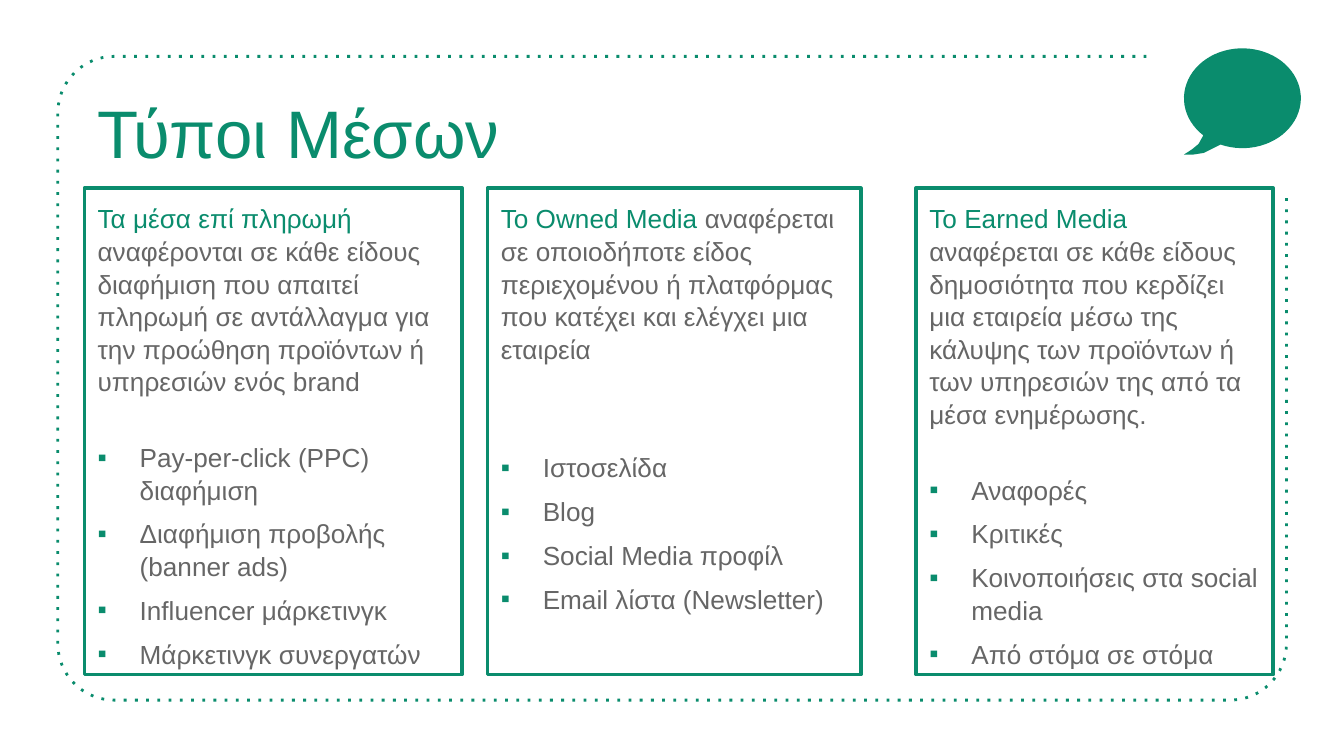
from dataclasses import dataclass
from math import cos, radians, sin

from lxml.etree import SubElement
from pptx import Presentation
from pptx.dml.color import RGBColor
from pptx.enum.shapes import MSO_SHAPE
from pptx.enum.text import MSO_ANCHOR, MSO_AUTO_SIZE, PP_ALIGN
from pptx.oxml.ns import qn
from pptx.util import Pt


@dataclass(frozen=True)
class Theme:
    """Colours, font and type sizes of the deck."""
    green: str = "0A8C6D"
    grey: str = "666666"
    white: str = "FFFFFF"
    font: str = "Arial"
    title_size: float = 36
    body_size: float = 14
    title_spacing: float = 1.1
    body_spacing: float = 1.04
    inset: float = 7.2
    indent: float = 22.5


THEME = Theme()
COLUMNS = [
    dict(left=45.2, width=202.3, lead="Τα μέσα επί πληρωμή ",
         body="αναφέρονται σε κάθε είδους διαφήμιση που απαιτεί πληρωμή σε αντάλλαγμα "
              "για την προώθηση προϊόντων ή υπηρεσιών ενός brand",
         items=["Pay-per-click (PPC) διαφήμιση", "Διαφήμιση προβολής (banner ads)",
                "Influencer μάρκετινγκ", "Μάρκετινγκ συνεργατών"], gap=23),
    dict(left=261.2, width=200, lead="Το Owned Media ",
         body="αναφέρεται σε οποιοδήποτε είδος περιεχομένου ή πλατφόρμας "
              "που κατέχει και ελέγχει μια εταιρεία",
         items=["Ιστοσελίδα", "Blog", "Social Media προφίλ", "Email λίστα (Newsletter)"],
         gap=46),
    dict(left=490.8, width=191.3, lead="Το Earned Media ",
         body="αναφέρεται σε κάθε είδους δημοσιότητα που κερδίζει μια εταιρεία μέσω της "
              "κάλυψης των προϊόντων ή των υπηρεσιών της από τα μέσα ενημέρωσης.",
         items=["Αναφορές", "Κριτικές", "Κοινοποιήσεις στα social media",
                "Από στόμα σε στόμα"], gap=23),
]


def color(value):
    """Turn a hex string into a colour."""
    return RGBColor.from_string(value)


def write(para, text, size=THEME.body_size, ink=THEME.grey,
          spacing=THEME.body_spacing, before=0):
    """Add a formatted span of text to a paragraph."""
    para.alignment = PP_ALIGN.LEFT
    para.line_spacing = spacing
    para.space_before = Pt(before)
    span = para.add_run()
    span.text = text
    span.font.name = THEME.font
    span.font.size = Pt(size)
    span.font.color.rgb = color(ink)


def add_bullet(para):
    """Give a paragraph a green square bullet with a hanging indent."""
    properties = para._p.get_or_add_pPr()
    properties.set("marL", str(Pt(THEME.indent)))
    properties.set("indent", str(-Pt(THEME.indent)))
    bullet_color = SubElement(properties, qn("a:buClr"))
    SubElement(bullet_color, qn("a:srgbClr")).set("val", THEME.green)
    SubElement(properties, qn("a:buFont")).set("typeface", THEME.font)
    SubElement(properties, qn("a:buChar")).set("char", "▪")


def set_frame(frame):
    """Set equal insets, wrapping and top anchoring on a text frame."""
    frame.word_wrap = True
    frame.auto_size = MSO_AUTO_SIZE.NONE
    frame.vertical_anchor = MSO_ANCHOR.TOP
    frame.margin_left = frame.margin_right = Pt(THEME.inset)
    frame.margin_top = frame.margin_bottom = Pt(THEME.inset)


def arc(center_x, center_y, radius_x, radius_y, start, end, steps):
    """List the points along an elliptical arc, with angles in degrees."""
    angles = [radians(start + (end - start) * step / steps) for step in range(steps + 1)]
    return [(center_x + radius_x * cos(angle), center_y + radius_y * sin(angle))
            for angle in angles]


def add_outline(page, points, close):
    """Build a freeform through points."""
    vertices = [(Pt(x), Pt(y)) for x, y in points]
    builder = page.shapes.build_freeform(*vertices[0])
    builder.add_line_segments(vertices[1:], close=close)
    outline = builder.convert_to_shape()
    outline.shadow.inherit = False
    return outline


def add_border(page, left, top, width, height, radius=30.2):
    """Draw the dotted rounded border, open at its top right corner."""
    right, bottom = left + width, top + height
    inner_left, inner_right = left + radius, right - radius
    inner_top, inner_bottom = top + radius, bottom - radius
    points = [(right - 75, top)]
    points += arc(inner_left, inner_top, radius, radius, 270, 180, 16)
    points += arc(inner_left, inner_bottom, radius, radius, 180, 90, 16)
    points += arc(inner_right, inner_bottom, radius, radius, 90, 0, 16)
    points.append((right, top + 75))
    border = add_outline(page, points, close=False)
    border.fill.background()
    border.line.color.rgb = color(THEME.green)
    border.line.width = Pt(1.5)
    line = border._element.spPr.find(qn("a:ln"))
    SubElement(line, qn("a:prstDash")).set("val", "dot")


def add_title(page, left, top, width, height):
    """Place and write the slide title."""
    box = page.shapes.title
    box.left, box.top, box.width, box.height = Pt(left), Pt(top), Pt(width), Pt(height)
    set_frame(box.text_frame)
    write(box.text_frame.paragraphs[0], "Τύποι Μέσων", size=THEME.title_size,
          ink=THEME.green, spacing=THEME.title_spacing)


def add_bubble(page, left, top, width, height):
    """Draw a speech bubble with a curved tail at its lower left."""
    radius_x, radius_y = width / 2, height * 0.47
    points = arc(left + radius_x, top + radius_y, radius_x, radius_y, 132, 472, 68)
    tail = [(0.25, 0.94), (0.17, 0.985), (0.08, 1), (0, 1), (0.07, 0.95), (0.125, 0.9)]
    points += [(left + x * width, top + y * height) for x, y in tail]
    bubble = add_outline(page, points, close=True)
    bubble.fill.solid()
    bubble.fill.fore_color.rgb = color(THEME.green)
    bubble.line.fill.background()


def add_column(page, left, top, width, height, lead, body, items, gap):
    """Draw a bordered column with a definition and a bulleted list."""
    box = page.shapes.add_shape(MSO_SHAPE.RECTANGLE, Pt(left), Pt(top), Pt(width), Pt(height))
    box.shadow.inherit = False
    box.fill.solid()
    box.fill.fore_color.rgb = color(THEME.white)
    box.line.color.rgb = color(THEME.green)
    box.line.width = Pt(2)
    frame = box.text_frame
    set_frame(frame)
    write(frame.paragraphs[0], lead, ink=THEME.green, before=6)
    write(frame.paragraphs[0], body, before=6)
    for index, item in enumerate(items):
        para = frame.add_paragraph()
        write(para, item, before=6 if index else 6 + gap - 6)
        add_bullet(para)


def build_media_types(deck):
    """Build the slide on the types of media."""
    page = deck.slides.add_slide(deck.slide_layouts[5])
    add_border(page, 31, 30.2, 658.2, 344.9)
    add_title(page, 45.2, 37.4, 540.7, 45.4)
    add_bubble(page, 634.3, 25.9, 62.6, 56.9)
    for column in COLUMNS:
        add_column(page, top=100.8, height=260.6, **column)


def main():
    """Create and save the deck."""
    deck = Presentation()
    deck.slide_width, deck.slide_height = Pt(720), Pt(405)
    build_media_types(deck)
    deck.save("out.pptx")


if __name__ == "__main__":
    main()
